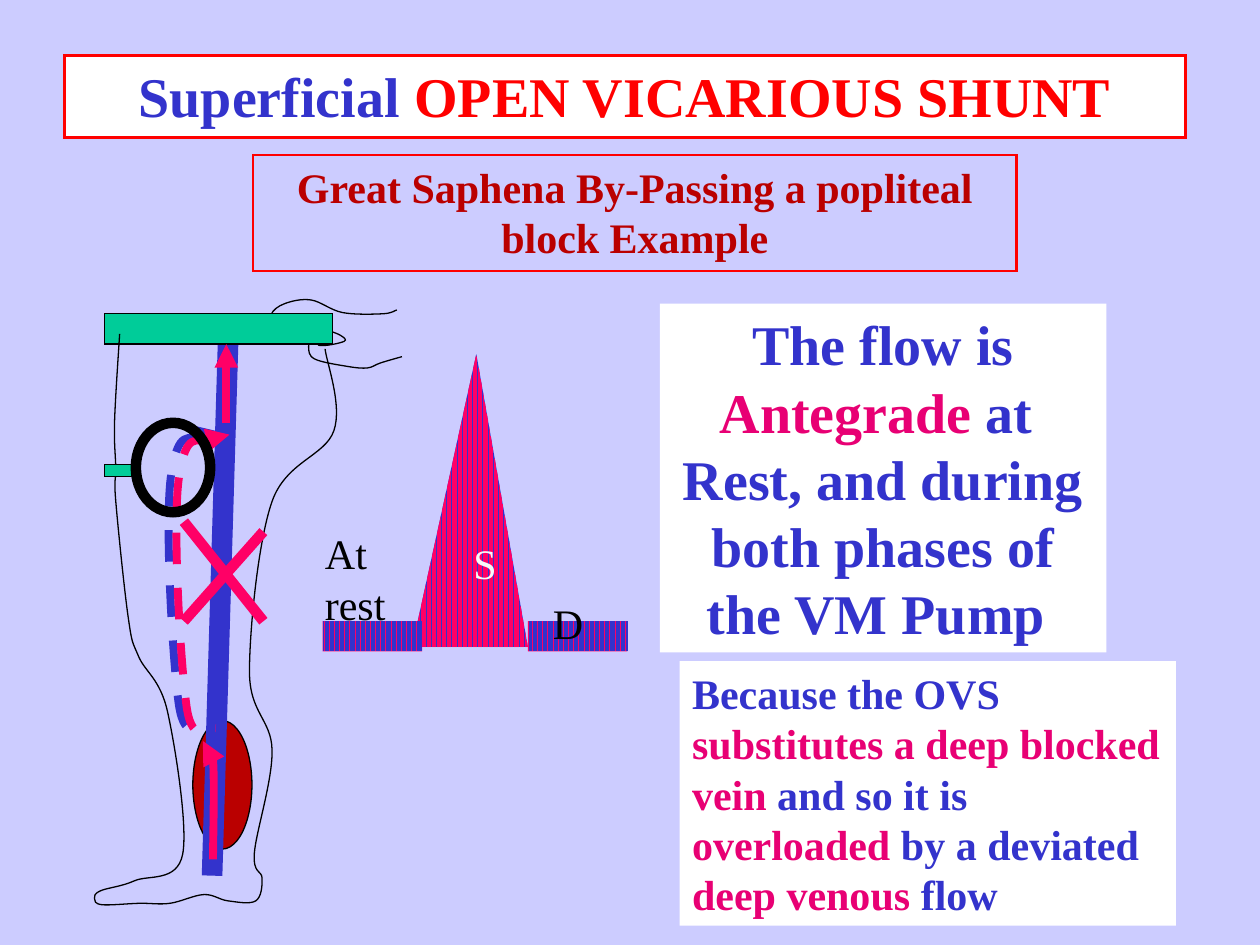
from lxml import etree
from pptx import Presentation
from pptx.dml.color import RGBColor
from pptx.enum.dml import MSO_LINE, MSO_PATTERN
from pptx.enum.shapes import MSO_CONNECTOR, MSO_SHAPE
from pptx.enum.text import MSO_ANCHOR, PP_ALIGN
from pptx.oxml.ns import qn
from pptx.util import Pt

SKY = RGBColor(0xCC, 0xCC, 0xFF)
WHITE = RGBColor(0xFF, 0xFF, 0xFF)
PALE = RGBColor(0xF8, 0xF8, 0xF8)
BLACK = RGBColor(0, 0, 0)
BLUE = RGBColor(0x33, 0x33, 0xCC)
RED = RGBColor(0xFF, 0, 0)
DARK = RGBColor(0xBA, 0, 0)
ROSE = RGBColor(0xFF, 0, 0x66)
PINK = RGBColor(0xE8, 0, 0x74)
GREEN = RGBColor(0, 0xCC, 0x99)

FONT = "Times New Roman"
RECT, OVAL = MSO_SHAPE.RECTANGLE, MSO_SHAPE.OVAL
BREAK = ("\n", None)

# Knots of the smooth outlines, relative to the leg box
HAND = [(172.8, 9.1), (164.9, 11.3), (141.8, 10.6), (123.8, 3.4),
        (108.7, 5.5), (100.8, 12), (101.5, 22.8), (105.8, 22.1),
        (110.2, 14.2), (116.6, 15.6), (123.1, 14.9), (129.6, 19.2),
        (140.4, 23.5), (142.6, 27.1), (128.2, 29.3), (125.3, 22.1),
        (122.4, 30), (126, 37.2), (145.4, 41.5), (156.2, 42.2),
        (163.4, 39.4), (175.7, 35.8)]
SKIN = [(131.8, 31.4), (136.8, 78.2), (101.5, 118.6), (88.6, 215.8),
        (101.5, 260.4), (91.4, 319.4), (95.8, 333.8), (92.2, 346.8),
        (76.3, 346.8), (62.6, 343.2), (43.2, 348.2), (25.9, 348.2),
        (4.3, 349), (0, 345.4), (3.6, 341), (23, 335.3), (50.4, 320.2),
        (41.8, 238.8), (25.2, 207.1), (19.4, 185.5), (12.2, 118.6),
        (12.2, 99.8), (11.5, 73.2), (14.4, 22.8)]
VEIN = [(72.7, 79), (43.9, 102.7), (48.2, 234.5), (64.8, 246.7)]
DEEP = [(67.2, 332.4), (76.5, 22.8)]
CALF = [(67.7, 323), (67.7, 266.2), (61.9, 255.4)]


def paint(shape, fill=None, line=None, width=0.75):
    shape.shadow.inherit = False
    if fill is None:
        shape.fill.background()
    else:
        shape.fill.solid()
        shape.fill.fore_color.rgb = fill
    if line is None:
        shape.line.fill.background()
    else:
        shape.line.color.rgb = line
        shape.line.width = Pt(width)
        ln = shape.line._get_or_add_ln()
        etree.SubElement(ln, qn("a:miter")).set("lim", "800000")
    return shape


def stripe(shape, fore, back):
    paint(shape).fill.patterned()
    shape.fill.pattern = MSO_PATTERN.DARK_VERTICAL
    shape.fill.fore_color.rgb = fore
    shape.fill.back_color.rgb = back


def tip(shape, end):
    """Arrowhead at an end: headEnd is the start, tailEnd the finish."""
    ln = shape.line._get_or_add_ln()
    etree.SubElement(ln, qn("a:" + end)).set("type", "triangle")


def form(slide, box, pts, close=False):
    pts = [(Pt(box[0] + x), Pt(box[1] + y)) for x, y in pts]
    build = slide.shapes.build_freeform(*pts[0])
    build.add_line_segments(pts[1:], close=close)
    return build.convert_to_shape()


def bend(shape):
    """Turn the straight segments into Catmull-Rom Bézier curves."""
    root = shape._element
    knots = [(int(p.get("x")), int(p.get("y")))
             for p in root.iter(qn("a:pt"))]
    ends = [knots[0], *knots, knots[-1]]
    lines = list(root.iter(qn("a:lnTo")))
    for seg, a, b, c, d in zip(lines, ends, ends[1:], ends[2:], ends[3:]):
        cubic = etree.Element(qn("a:cubicBezTo"))
        first = [q + (r - p) / 6 for p, q, r in zip(a, b, c)]
        second = [r - (s - q) / 6 for q, r, s in zip(b, c, d)]
        for x, y in (first, second, c):
            etree.SubElement(cubic, qn("a:pt"),
                             x=str(round(x)), y=str(round(y)))
        seg.getparent().replace(seg, cubic)


def curve(slide, box, knots, color, width=0.75):
    shape = form(slide, box, knots)
    bend(shape)
    return paint(shape, None, color, width)


def block(slide, box, kind, x, y, w, h):
    return slide.shapes.add_shape(
        kind, Pt(box[0] + x), Pt(box[1] + y), Pt(w), Pt(h))


def ray(slide, box, x1, y1, x2, y2, width):
    line = slide.shapes.add_connector(
        MSO_CONNECTOR.STRAIGHT, Pt(box[0] + x1), Pt(box[1] + y1),
        Pt(box[0] + x2), Pt(box[1] + y2))
    line.line.color.rgb = ROSE
    line.line.width = Pt(width)
    etree.SubElement(line._element.spPr, qn("a:effectLst"))
    return line


def write(shape, runs, size, bold=True, align=PP_ALIGN.CENTER):
    """Fill a shape with one paragraph of (text, colour) runs."""
    frame = shape.text_frame
    frame.word_wrap = True
    frame.vertical_anchor = MSO_ANCHOR.TOP
    para = frame.paragraphs[0]
    para.alignment = align
    para.font.name, para.font.size, para.font.bold = FONT, Pt(size), bold
    for text, color in runs:
        if color is None:
            para.add_line_break()
            continue
        run = para.add_run()
        run.text = text
        run.font.color.rgb = color


def card(slide, box, runs, size, fill=WHITE, line=None,
         align=PP_ALIGN.CENTER):
    shape = paint(block(slide, (0, 0), RECT, *box), fill, line, 1.5)
    write(shape, runs, size, align=align)


def label(slide, box, x, y, h, text, color):
    shape = slide.shapes.add_textbox(
        Pt(box[0] + x), Pt(box[1] + y), Pt(67.7), Pt(h))
    write(shape, [(text, color)], 24, False, PP_ALIGN.LEFT)


def vein(slide, box, color):
    line = curve(slide, box, VEIN, color, 4.5)
    line.line.dash_style = MSO_LINE.DASH
    tip(line, "headEnd")


def leg(slide, box):
    curve(slide, box, HAND, BLACK)
    paint(block(slide, box, OVAL, 56.2, 243.8, 33.8, 73.4), DARK, BLACK)
    curve(slide, box, DEEP, BLUE, 11.75)
    paint(block(slide, box, RECT, 5.8, 11.3, 130.3, 17.3), GREEN, BLACK)
    vein(slide, box, BLUE)
    curve(slide, box, SKIN, BLACK)
    ray(slide, box, 96.5, 135.8, 51.1, 187, 6)
    ray(slide, box, 51.1, 130.1, 96.5, 187, 6)
    vein(slide, (box[0] + 4.5, box[1] + 1.4), ROSE)
    tip(curve(slide, box, CALF, ROSE, 4.5), "tailEnd")
    tip(ray(slide, box, 75.3, 73.9, 75.3, 28.6, 4.5), "tailEnd")
    paint(block(slide, box, RECT, 5.8, 97.3, 18.7, 7.2), GREEN, BLACK)
    paint(block(slide, box, OVAL, 23.6, 73.6, 42.5, 51.1), None, BLACK, 6)


def wave(slide, box):
    """Flow trace: a systolic peak between two resting strips."""
    label(slide, box, 0.6, 96.1, 64.8, "At rest", BLACK)
    peak = [(123.7, 168), (57.4, 168), (94.2, 0.3)]
    stripe(form(slide, box, peak, True), ROSE, BLUE)
    label(slide, box, 85.5, 101.8, 36, "S", PALE)
    for x in (6.3, 123.7):
        stripe(block(slide, box, RECT, x, 153, 56.9, 17.3), BLUE, ROSE)
    label(slide, box, 130.9, 135.7, 36, "D", BLACK)


def main():
    deck = Presentation()
    deck.slide_width, deck.slide_height = Pt(720), Pt(540)
    slide = deck.slides.add_slide(deck.slide_layouts[6])
    slide.background.fill.solid()
    slide.background.fill.fore_color.rgb = SKY

    card(slide, (36.7, 31.7, 640.8, 46.8),
         [("Superficial ", BLUE), ("OPEN VICARIOUS SHUNT", RED)], 32,
         line=RED)
    card(slide, (144.5, 88.6, 436.5, 66.2),
         [("Great Saphena By-Passing a popliteal block Example", DARK)], 24,
         SKY, RED)
    card(slide, (377, 173.5, 255.2, 199.4),
         [("The flow is ", BLUE), ("Antegrade", PINK), (" at ", BLUE), BREAK,
          ("Rest, and during both phases of the VM Pump ", BLUE)], 32)
    card(slide, (388.4, 377.8, 283.5, 151.2),
         [("Because the OVS ", BLUE),
          ("substitutes a deep blocked vein", PINK), (" and so it is ", BLUE),
          ("overloaded", PINK), (" by a deviated ", BLUE),
          ("deep venous", PINK), (" flow", BLUE)], 24, align=PP_ALIGN.LEFT)
    leg(slide, (54, 168))
    wave(slide, (178, 202))
    deck.save("out.pptx")


if __name__ == "__main__":
    main()
